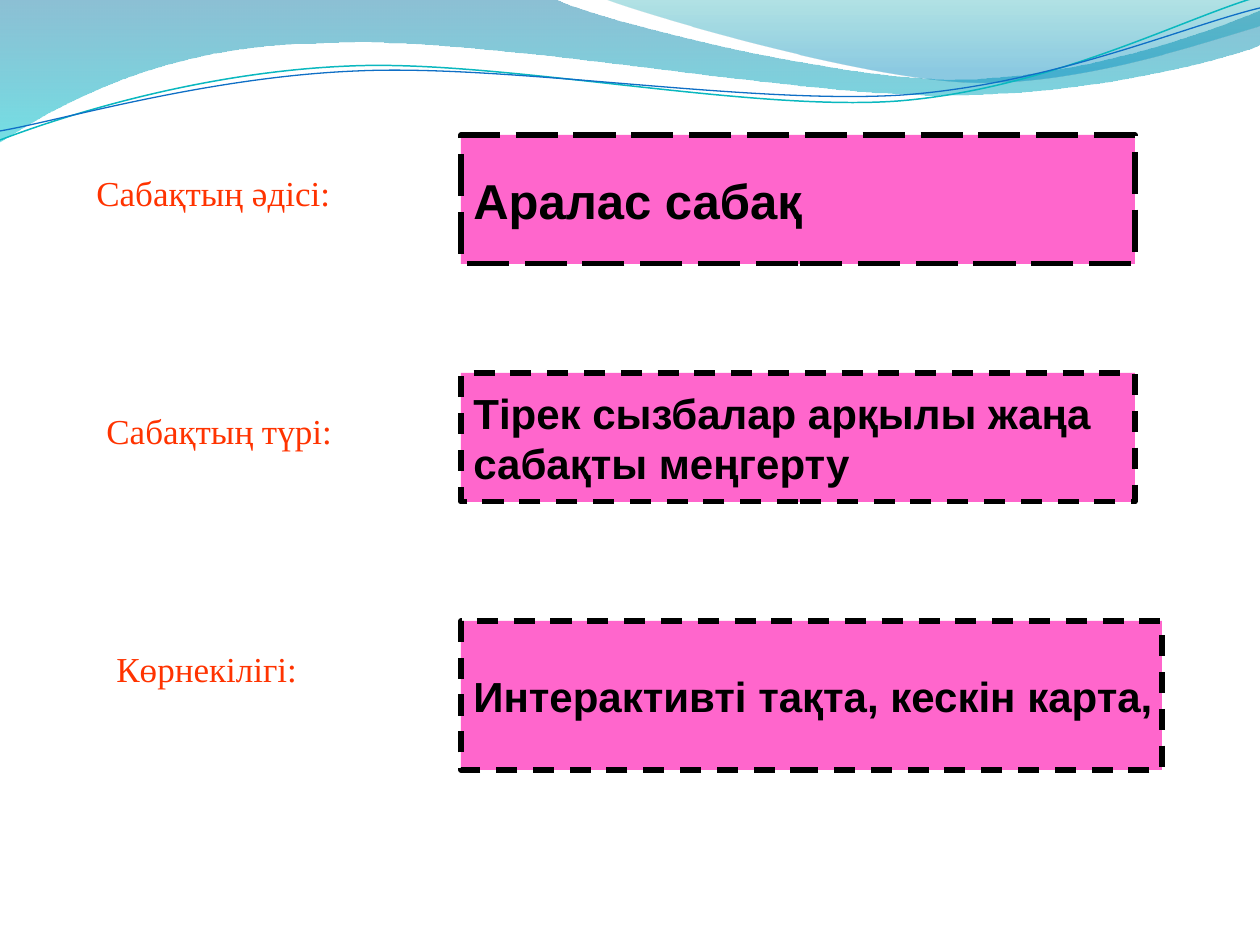
from dataclasses import dataclass

from lxml import etree
from pptx import Presentation
from pptx import util as u
from pptx.dml.color import RGBColor
from pptx.enum import dml, shapes, text
from pptx.oxml.ns import qn

PX = 914400 / 126

BLACK = RGBColor(0x00, 0x00, 0x00)
PINK = RGBColor(0xFF, 0x66, 0xCC)
ORANGE = RGBColor(0xFF, 0x33, 0x00)
SKY = RGBColor(0x33, 0x99, 0xFF)
TEAL = RGBColor(0x0A, 0xB8, 0xBF)
BLUE = RGBColor(0x0F, 0x6F, 0xC6)


@dataclass(frozen=True)
class Stop:
    position: float
    color: RGBColor
    opacity: int


@dataclass(frozen=True)
class Wave:
    """Segments hold one point for a straight line, three for a Bezier curve."""
    start: tuple[int, int]
    segments: list[tuple[tuple[int, int], ...]]
    stops: tuple[Stop, ...] = ()
    line: RGBColor | None = None
    weight: float = 0


@dataclass(frozen=True)
class Topic:
    label: str
    label_at: tuple[int, int]
    answer: str
    top: int
    width: int = 674
    height: int = 129
    size: int = 24
    dash: dml.MSO_LINE = dml.MSO_LINE.DASH


WAVES = [
    Wave((0, -1), [
        ((554, -1),),
        ((600, 21), (837, 79), (955, 79)),
        ((1075, 79), (1207, 33), (1260, 11)),
        ((1261, 45),),
        ((1239, 55), (1096, 96), (940, 95)),
        ((784, 95), (481, 35), (324, 43)),
        ((163, 44), (58, 105), (-1, 142)),
    ], stops=(Stop(0, RGBColor(0x00, 0x74, 0xA1), 45),
              Stop(1, RGBColor(0x00, 0xC6, 0xCF), 55))),
    Wave((604, -1), [
        ((641, 14), (859, 78), (969, 82)),
        ((1079, 86), (1211, 40), (1260, 26)),
        ((1260, 0),),
    ], stops=(Stop(0, RGBColor(0x00, 0xA1, 0xA9), 30),
              Stop(0.8, RGBColor(0x00, 0x8B, 0xBF), 45))),
    Wave((0, 140), [
        ((60, 117), (199, 72), (349, 66)),
        ((498, 59), (747, 112), (898, 101)),
        ((1049, 89), (1182, 19), (1257, -3)),
    ], line=TEAL, weight=0.85),
    Wave((0, 131), [
        ((59, 121), (207, 77), (357, 71)),
        ((508, 64), (751, 105), (903, 95)),
        ((1053, 84), (1185, 26), (1260, 8)),
    ], line=BLUE, weight=0.75),
]

TOPICS = [
    Topic("Сабақтың әдісі:", (84, 165), "Аралас сабақ", 135,
          size=28, dash=dml.MSO_LINE.LONG_DASH),
    Topic("Сабақтың түрі:", (94, 403),
          "Тірек сызбалар арқылы жаңа\nсабақты меңгерту", 373),
    Topic("Көрнекілігі:", (104, 641), "Интерактивті тақта, кескін карта,", 621,
          width=701, height=149),
]
ANSWER_LEFT = 461
LABEL_SIZE = (338, 69)


def px(*lengths: int) -> list[u.Emu]:
    return [u.Emu(round(length * PX)) for length in lengths]


def draw_wave(slide, wave: Wave) -> None:
    """Build the outline from all points, then join each triple into a curve."""
    builder = slide.shapes.build_freeform(*wave.start, scale=PX)
    points = [point for segment in wave.segments for point in segment]
    builder.add_line_segments(points, close=bool(wave.stops))
    band = builder.convert_to_shape()
    band.shadow.inherit = False

    vertices = iter(list(band._element.iter(qn("a:lnTo"))))
    for segment in wave.segments:
        corners = [next(vertices) for _ in segment]
        if len(corners) == 3:
            curve = etree.Element(qn("a:cubicBezTo"))
            corners[0].addprevious(curve)
            for corner in corners:
                curve.append(corner[0])
                corner.getparent().remove(corner)

    if wave.stops:
        band.line.fill.background()
        band.fill.gradient()
        band.fill.gradient_angle = 270
        for gradient_stop, stop in zip(band.fill.gradient_stops, wave.stops):
            gradient_stop.position = stop.position
            gradient_stop.color.rgb = stop.color
        for color, stop in zip(band._element.spPr.iter(qn("a:srgbClr")), wave.stops):
            etree.SubElement(color, qn("a:alpha"), val=str(stop.opacity * 1000))
    else:
        band.fill.background()
        band.line.color.rgb = wave.line
        band.line.width = u.Pt(wave.weight)


def write(shape, content: str, *, font: str, size: int, color: RGBColor,
          bold: bool = False, anchor=text.MSO_ANCHOR.TOP,
          outline: RGBColor | None = None) -> None:
    frame = shape.text_frame
    frame.text = content
    frame.word_wrap = False
    frame.vertical_anchor = anchor
    for paragraph in frame.paragraphs:
        paragraph.alignment = text.PP_ALIGN.LEFT
        for run in paragraph.runs:
            run.font.name = font
            run.font.size = u.Pt(size)
            run.font.bold = bold
            run.font.color.rgb = color
            if outline is not None:
                edge = etree.Element(qn("a:ln"), w=str(u.Pt(0.75)))
                solid = etree.SubElement(edge, qn("a:solidFill"))
                etree.SubElement(solid, qn("a:srgbClr"), val=str(outline))
                run.font._element.insert(0, edge)


def draw_topic(slide, topic: Topic) -> None:
    label = slide.shapes.add_textbox(*px(*topic.label_at, *LABEL_SIZE))
    write(label, topic.label, font="Times New Roman", size=20, color=ORANGE,
          outline=SKY)

    answer = slide.shapes.add_shape(
        shapes.MSO_SHAPE.RECTANGLE,
        *px(ANSWER_LEFT, topic.top, topic.width, topic.height))
    answer.shadow.inherit = False
    answer.fill.solid()
    answer.fill.fore_color.rgb = PINK
    answer.line.color.rgb = BLACK
    answer.line.width = u.Pt(3)
    answer.line.dash_style = topic.dash
    write(answer, topic.answer, font="Arial", size=topic.size, color=BLACK,
          bold=True, anchor=text.MSO_ANCHOR.MIDDLE)


def main() -> None:
    deck = Presentation()
    deck.slide_width, deck.slide_height = px(1260, 945)
    slide = deck.slides.add_slide(deck.slide_layouts[6])
    for wave in WAVES:
        draw_wave(slide, wave)
    for topic in TOPICS:
        draw_topic(slide, topic)
    deck.save("out.pptx")


if __name__ == "__main__":
    main()
